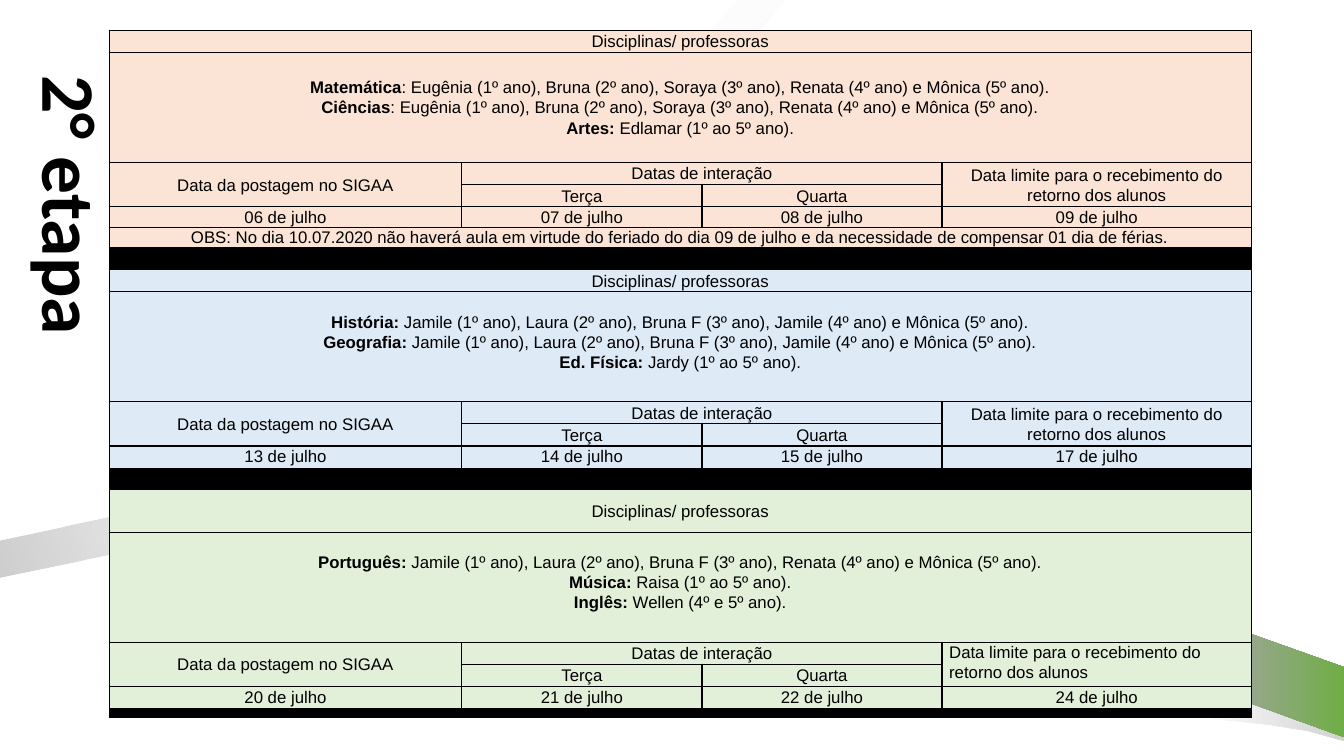
"""Builds the slide with the class schedule of the second stage."""
from pptx import Presentation
from pptx.dml.color import RGBColor
from pptx.enum import text as tx
from pptx.oxml import parse_xml
from pptx.oxml import ns
from pptx.util import Cm, Pt

TITLE = "2° etapa"
HEAD = "Disciplinas/ professoras"
POST = "Data da postagem no SIGAA"
MEET = "Datas de interação"
DAYS = ["Terça", "Quarta"]
LIMIT = "Data limite para o recebimento do retorno dos alunos"
STAGES = [
    {"fill": "FBE4D5", "head": 0.56, "date": 0.53, "gap": 0.54, "top": 0,
     "subjects": [
         ("Matemática", ": Eugênia (1º ano), Bruna (2º ano), Soraya (3º ano), Renata (4º ano) e Mônica (5º ano)."),
         ("Ciências", ": Eugênia (1º ano), Bruna (2º ano), Soraya (3º ano), Renata (4º ano) e Mônica (5º ano)."),
         ("Artes: ", "Edlamar (1º ao 5º ano).")],
     "dates": ["06 de julho", "07 de julho", "08 de julho", "09 de julho"],
     "note": "OBS: No dia 10.07.2020 não haverá aula em virtude do feriado do dia 09 de julho "
             "e da necessidade de compensar 01 dia de férias."},
    {"fill": "DEEAF6", "head": 0.56, "date": 0.56, "gap": 0.54, "top": 0.5,
     "subjects": [
         ("História:", " Jamile (1º ano), Laura (2º ano), Bruna F (3º ano), Jamile (4º ano) e Mônica (5º ano)."),
         ("Geografia:", " Jamile (1º ano), Laura (2º ano), Bruna F (3º ano), Jamile (4º ano) e Mônica (5º ano)."),
         ("Ed. Física:", " Jardy (1º ao 5º ano).")],
     "dates": ["13 de julho", "14 de julho", "15 de julho", "17 de julho"]},
    {"fill": "E2EFD9", "head": 1.07, "date": 0.55, "gap": 0.23, "top": 0.5,
     "subjects": [
         ("Português:", " Jamile (1º ano), Laura (2º ano), Bruna F (3º ano), Renata (4º ano) e Mônica (5º ano)."),
         ("Música:", " Raisa (1º ao 5º ano)."),
         ("Inglês:", " Wellen (4º e 5º ano).")],
     "dates": ["20 de julho", "21 de julho", "22 de julho", "24 de julho"],
     "left": True},
]
COLS = [8.89, 6.05, 6.05, 7.8]
LINE, BODY, NOTE = 0.56, 2.77, 0.51
BANDS = [
    ([(30.53, 18.11), (32, 18.27), (32.95, 18.42), (33.86, 18.67),
      (33.86, 16.97), (32.5, 16.67), (31.09, 16.56)],
     [(3, "A5A5A5", 6), (100, "A5A5A5", 50)], 0),
    ([(33.86, 16.81), (31.04, 15.8), (30.48, 17.35), (33.86, 18.57)],
     [(3, "A5A5A5", 100), (100, "70AD47", 100)], 0),
    ([(19.79, 0), (18.57, 0), (17.4, 1.35), (16.51, 3.12), (18.19, 1.88)],
     [(0, "E7E6E6", 5), (100, "E7E6E6", 20)], 53),
    ([(5.69, 12.83), (3.61, 12.83), (0, 13.61), (0, 14.55), (3.89, 13.74)],
     [(0, "000000", 5), (100, "000000", 20)], 164),
]
MID, TOP = tx.MSO_ANCHOR.MIDDLE, tx.MSO_ANCHOR.TOP
CENTER, LEFT = tx.PP_ALIGN.CENTER, tx.PP_ALIGN.LEFT


def color(code):
    return RGBColor.from_string(code)


def add_run(para, words, size, face, bold=False):
    run = para.add_run()
    run.text = words
    run.font.size, run.font.name, run.font.bold = Pt(size), face, bold
    run.font.color.rgb = color("000000")


def add_band(slide, points, stops, angle):
    spots = [(Cm(x), Cm(y)) for x, y in points]
    form = slide.shapes.build_freeform(*spots[0])
    form.add_line_segments(spots[1:])
    band = form.convert_to_shape()
    band.shadow.inherit = False
    band.line.fill.background()
    band.fill.background()
    marks = "".join(
        f'<a:gs pos="{at * 1000}"><a:srgbClr val="{code}"><a:alpha val="{part * 1000}"/></a:srgbClr></a:gs>'
        for at, code, part in stops)
    props = band._element.spPr
    props.replace(props.find(ns.qn("a:noFill")), parse_xml(
        f'<a:gradFill {ns.nsdecls("a")}><a:gsLst>{marks}</a:gsLst>'
        f'<a:lin ang="{angle * 60000}" scaled="0"/></a:gradFill>'))


def style(cell, fill):
    cell.margin_left = cell.margin_right = Cm(0.18)
    cell.margin_top = cell.margin_bottom = 0
    cell.fill.solid()
    cell.fill.fore_color.rgb = color(fill)
    props = cell._tc.get_or_add_tcPr()
    for i, side in enumerate("LRTB"):
        props.insert(i, parse_xml(
            f'<a:ln{side} {ns.nsdecls("a")} w="12700"><a:solidFill>'
            f'<a:srgbClr val="000000"/></a:solidFill></a:ln{side}>'))
    cell.text_frame.paragraphs[0]._p.append(
        parse_xml(f'<a:endParaRPr {ns.nsdecls("a")} sz="400"/>'))


def write(cell, lines, anchor=MID, align=CENTER, space=1.07):
    cell.vertical_anchor = anchor
    frame = cell.text_frame
    for i, (bold, plain) in enumerate(lines):
        para = frame.add_paragraph() if i else frame.paragraphs[0]
        para.alignment, para.line_spacing = align, space
        if bold:
            add_run(para, bold, 12, "Arial", True)
        add_run(para, plain, 12, "Arial")


def sizes(stage):
    note = [NOTE] if "note" in stage else []
    return [stage["head"], BODY, LINE, LINE, stage["date"], *note, stage["gap"]]


def add_stage(table, row, stage):
    def put(down, col, words, **look):
        write(table.cell(row + down, col), [("", words)], **look)

    def join(down, col, end, last):
        table.cell(row + down, col).merge(table.cell(row + end, last))

    for down in (0, 1):
        join(down, 0, down, 3)
    join(2, 0, 3, 0)
    join(2, 1, 2, 2)
    join(2, 3, 3, 3)
    put(0, 0, HEAD)
    body = table.cell(row + 1, 0)
    write(body, stage["subjects"], TOP if stage["top"] else MID)
    body.margin_top = Cm(stage["top"])
    put(2, 0, POST)
    put(2, 1, MEET)
    if stage.get("left"):
        put(2, 3, LIMIT, anchor=TOP, align=LEFT)
    else:
        put(2, 3, LIMIT)
    for col, day in enumerate(DAYS, 1):
        put(3, col, day)
    for col, date in enumerate(stage["dates"]):
        put(4, col, date, anchor=TOP)
    if "note" in stage:
        join(5, 0, 5, 3)
        put(5, 0, stage["note"], anchor=TOP, space=1.0)
    gap = len(sizes(stage)) - 1
    join(gap, 0, gap, 3)


def add_plan(slide):
    highs = [high for stage in STAGES for high in sizes(stage)]
    frame = slide.shapes.add_table(len(highs), len(COLS), Cm(2.75), Cm(0.76),
                                   Cm(sum(COLS)), Cm(sum(highs)))
    table = frame.table
    table.first_row = table.horz_banding = False
    for col, wide in zip(table.columns, COLS):
        col.width = Cm(wide)
    for row, high in zip(table.rows, highs):
        row.height = Cm(high)
    start = 0
    for stage in STAGES:
        count = len(sizes(stage))
        for down in range(count):
            for col in range(len(COLS)):
                style(table.cell(start + down, col),
                      stage["fill"] if down < count - 1 else "000000")
        add_stage(table, start, stage)
        start += count


def add_title(slide):
    left, top, wide, high = 0.28, 1.65, 2.82, 10.36
    shift = (high - wide) / 2
    title = slide.shapes.title
    title.left, title.top = Cm(left - shift), Cm(top + shift)
    title.width, title.height = Cm(high), Cm(wide)
    title.rotation = 90
    frame = title.text_frame
    frame.auto_size = tx.MSO_AUTO_SIZE.NONE
    frame.vertical_anchor = TOP
    frame.paragraphs[0].alignment = LEFT
    add_run(frame.paragraphs[0], TITLE, 54, "Calibri", True)


def main():
    deck = Presentation()
    deck.slide_width, deck.slide_height = Cm(33.87), Cm(19.05)
    slide = deck.slides.add_slide(deck.slide_layouts[5])
    for points, stops, angle in BANDS:
        add_band(slide, points, stops, angle)
    add_plan(slide)
    add_title(slide)
    deck.save("out.pptx")


if __name__ == "__main__":
    main()
